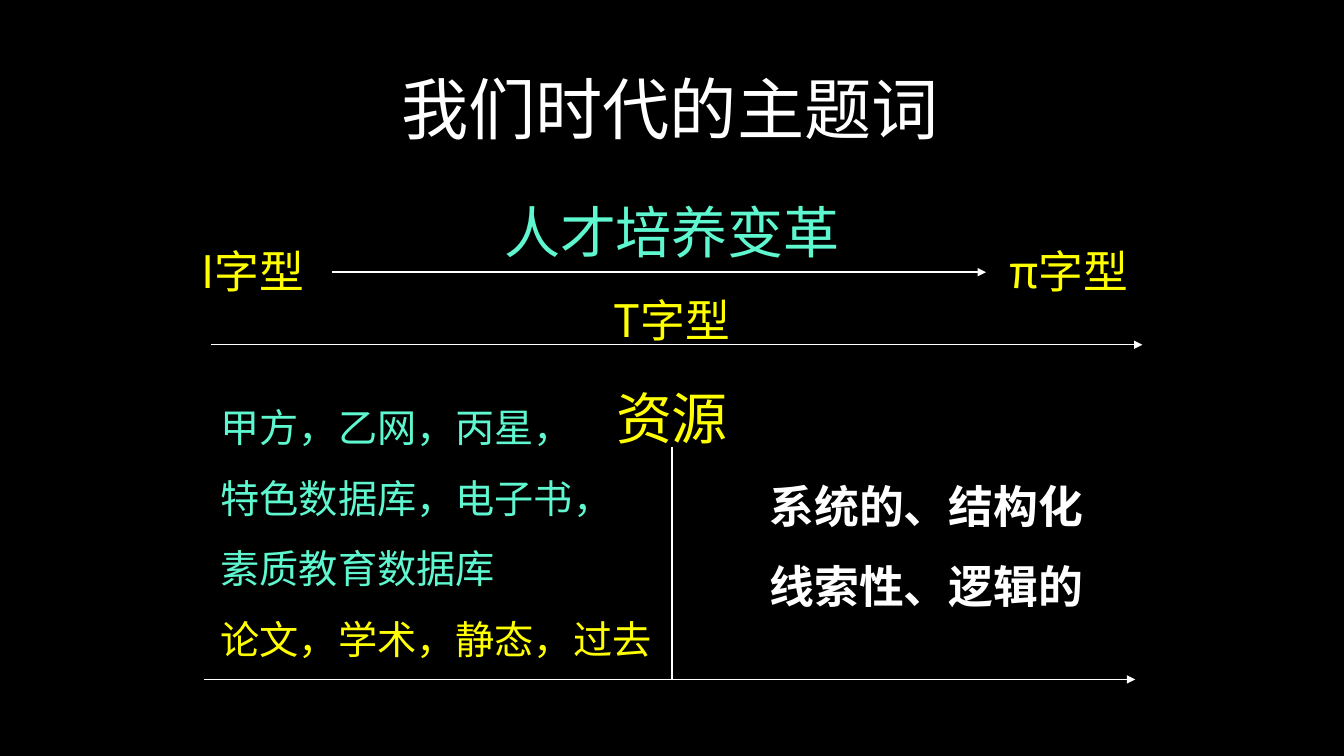
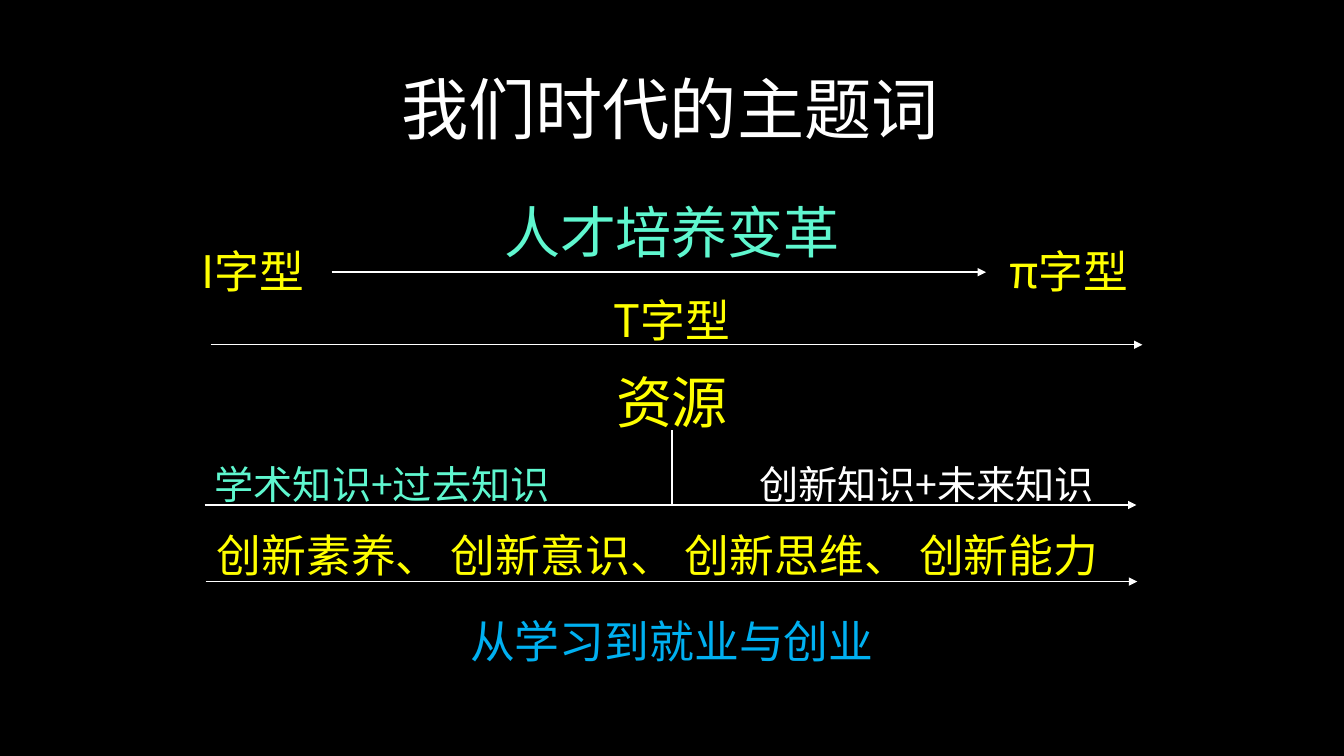
from lxml import etree
from pptx import Presentation
from pptx.dml.color import RGBColor
from pptx.enum.shapes import MSO_CONNECTOR
from pptx.enum.text import MSO_ANCHOR, MSO_AUTO_SIZE, PP_ALIGN as AL
from pptx.oxml.ns import qn
from pptx.util import Inches, Pt

BLACK = RGBColor(0x00, 0x00, 0x00)
WHITE = RGBColor(0xFF, 0xFF, 0xFF)
YELLOW = RGBColor(0xFF, 0xFF, 0x00)
MINT = RGBColor(0x5F, 0xF7, 0xCF)
BLUE = RGBColor(0x00, 0xB0, 0xF0)
FONT = "Noto Sans CJK SC"
TITLE_ONLY = 5

# Shared measures, in percent of the slide's width or height
AXIS_LENGTH = 69.32
LEFT_W = 28.36
RIGHT_X, RIGHT_W = 52.96, 31.96
HEADING_H = 13.47
WIDE_W = 68.94


class Deck:
    """Holds the style and the current slide; lengths are percent shares."""

    def __init__(self):
        self.prs = Presentation()
        self.prs.slide_width = Inches(13.33)
        self.prs.slide_height = Inches(7.5)
        fill = self.prs.slide_master.background.fill
        fill.solid()
        fill.fore_color.rgb = BLACK
        self.s = None

    def x(self, share):
        return round(self.prs.slide_width * share / 100)

    def y(self, share):
        return round(self.prs.slide_height * share / 100)

    def place(self, sp, x, y, w, h):
        sp.left, sp.top, sp.width, sp.height = self.x(x), self.y(y), self.x(w), self.y(h)

    def set_text(self, sp, lines, size, color, align, spacing, bold=False):
        tf = sp.text_frame
        tf.word_wrap = True
        tf.auto_size = MSO_AUTO_SIZE.NONE
        tf.vertical_anchor = MSO_ANCHOR.TOP
        for i, line in enumerate(lines):
            p = tf.add_paragraph() if i else tf.paragraphs[0]
            p.alignment = align
            p.line_spacing = spacing
            r = p.add_run()
            r.text = line
            r.font.size = Pt(size)
            r.font.bold = bold
            r.font.name = FONT
            r.font.color.rgb = color
            etree.SubElement(r._r.get_or_add_rPr(), qn("a:ea"), typeface=FONT)

    def slide(self, title):
        self.s = self.prs.slides.add_slide(self.prs.slide_layouts[TITLE_ONLY])
        sp = self.s.shapes.title
        self.place(sp, -0.15, 8.27, 100, 12.13)
        self.set_text(sp, [title], 48, WHITE, AL.CENTER, 1.0)

    def text(self, x, y, w, h, *lines, size=32, color=YELLOW, align=AL.CENTER,
             spacing=1.5, bold=False):
        sp = self.s.shapes.add_textbox(0, 0, 0, 0)
        self.place(sp, x, y, w, h)
        self.set_text(sp, lines, size, color, align, spacing, bold)
        return sp

    def line(self, x1, y1, x2, y2, width=1.0, arrow=False):
        c = self.s.shapes.add_connector(
            MSO_CONNECTOR.STRAIGHT, self.x(x1), self.y(y1), self.x(x2), self.y(y2))
        c.line.color.rgb = WHITE
        c.line.width = Pt(width)
        props = c._element.spPr
        if arrow:
            etree.SubElement(props.find(qn("a:ln")), qn("a:tailEnd"), type="triangle")
        etree.SubElement(props, qn("a:effectLst"))
        return c

    def axis(self, x, y):
        self.line(x, y, x + AXIS_LENGTH, y, arrow=True)

    def talent_band(self):
        self.text(0, 21.07, 100, HEADING_H, "人才培养变革", size=40, color=MINT)
        for x, label in ((14.25, "I字型"), (74.34, "π字型")):
            self.text(x, 31.6, 12, 8.53, label, align=AL.LEFT, spacing=1.0)
        self.line(24.68, 36, 73.37, 36, arrow=True)
        self.text(0, 34.53, 100, 11.07, "T字型")
        self.axis(15.68, 45.6)

    def resources(self, y, base_y):
        """Heading with a divider from its foot down to the base axis."""
        sp = self.text(0, y, 100, HEADING_H, "资源", size=40)
        c = self.line(50, y + HEADING_H, 50, base_y, width=0.75)
        c.begin_connect(sp, 2)


def main():
    deck = Deck()

    # Slide 1: existing resources against structured ones
    deck.slide("我们时代的主题词")
    deck.talent_band()
    deck.resources(45.6, 89.87)
    deck.axis(15.15, 89.87)
    deck.text(15.68, 49.6, LEFT_W, 28.67, "甲方，乙网，丙星，",
              "特色数据库，电子书，素质教育数据库", size=28, color=MINT, align=AL.LEFT)
    deck.text(15.68, 77.6, 44.26, 9.87, "论文，学术，静态，过去", size=28, align=AL.LEFT)
    deck.text(RIGHT_X, 59.07, RIGHT_W, 21.87, "系统的、结构化", "线索性、逻辑的",
              color=WHITE, bold=True)

    # Slide 2: from knowledge to innovation and careers
    deck.slide("我们时代的主题词")
    deck.talent_band()
    deck.resources(43.47, 66.8)
    deck.axis(15.23, 66.8)
    deck.text(15.23, 57.07, LEFT_W, 9.87, "学术知识+过去知识", size=28, color=MINT,
              align=AL.LEFT)
    deck.text(RIGHT_X, 57.07, RIGHT_W, 9.87, "创新知识+未来知识", size=28, color=WHITE)
    deck.text(15.38, 65.6, WIDE_W, 12.13, "创新素养、 创新意识、 创新思维、 创新能力",
              align=AL.LEFT)
    deck.axis(15.3, 76.93)
    deck.text(15.53, 76.93, WIDE_W, 11.07, "从学习到就业与创业", color=BLUE)

    deck.prs.save("out.pptx")


if __name__ == "__main__":
    main()
